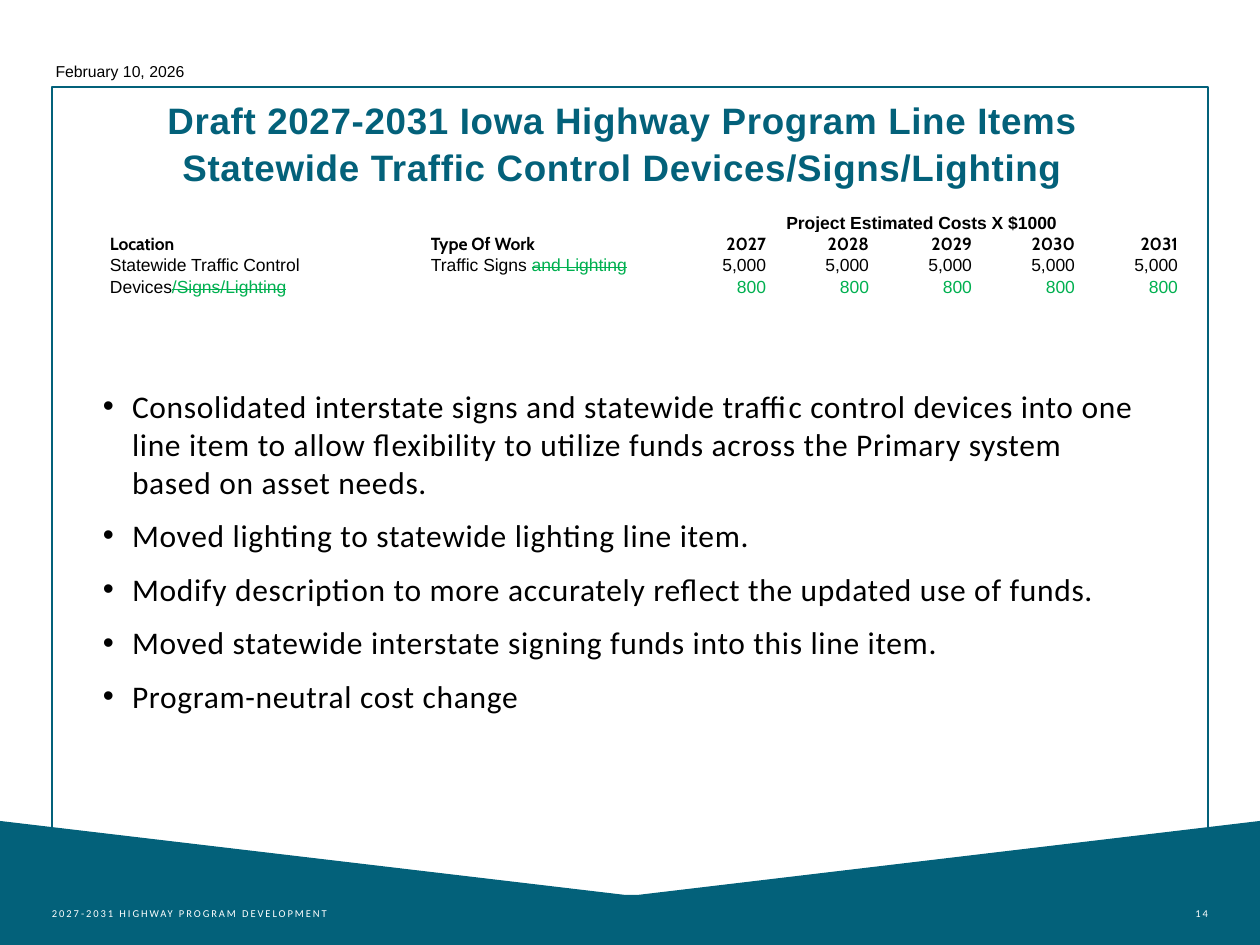
from dataclasses import dataclass, replace

from lxml import etree
from pptx import Presentation
from pptx.dml.color import RGBColor
from pptx.enum.shapes import MSO_SHAPE
from pptx.enum.text import MSO_ANCHOR, PP_ALIGN
from pptx.oxml.ns import qn
from pptx.util import Emu, Pt

RECT = MSO_SHAPE.RECTANGLE
TOP, BOTTOM = MSO_ANCHOR.TOP, MSO_ANCHOR.BOTTOM
LEFT, CENTER, RIGHT = PP_ALIGN.LEFT, PP_ALIGN.CENTER, PP_ALIGN.RIGHT
SCALE = 914400 / 126
TEAL, WHITE, BLACK, GREEN = "03617A", "FFFFFF", "000000", "00B050"


@dataclass(frozen=True)
class Style:
    font: str
    size: int
    color: str = BLACK
    bold: bool = False
    strike: bool = False
    gap: float = 0


@dataclass(frozen=True)
class Box:
    left: int
    top: int
    width: int
    height: int


@dataclass(frozen=True)
class Label:
    text: str
    box: Box
    style: Style
    align: PP_ALIGN = LEFT
    anchor: MSO_ANCHOR = TOP
    inset: tuple = (0, 6, 0, 6)
    wrap: bool = True


@dataclass(frozen=True)
class Entry:
    text: str = ""
    style: Style = Style("Arial", 10)
    struck: str = ""
    align: PP_ALIGN = LEFT
    fill: str = ""


def px(length: float) -> Emu:
    return Emu(round(length * SCALE))


def rgb(color: str) -> RGBColor:
    return RGBColor.from_string(color)


def place(box: Box) -> tuple:
    return px(box.left), px(box.top), px(box.width), px(box.height)


def format_run(run, style: Style) -> None:
    font = run.font
    font.name, font.size, font.bold = style.font, Pt(style.size), style.bold
    font.color.rgb = rgb(style.color)
    props = run._r.get_or_add_rPr()
    if style.gap:
        props.set("spc", str(round(style.gap * 100)))
    if style.strike:
        props.set("strike", "sngStrike")


def fill_frame(shape, label: Label) -> None:
    frame = shape.text_frame
    frame.text = label.text
    frame.word_wrap = label.wrap
    frame.vertical_anchor = label.anchor
    (frame.margin_left, frame.margin_top,
     frame.margin_right, frame.margin_bottom) = map(px, label.inset)
    for line in frame.paragraphs:
        line.alignment = label.align
        for run in line.runs:
            format_run(run, label.style)


def add_label(slide, label: Label):
    shape = slide.shapes.add_textbox(*place(label.box))
    fill_frame(shape, label)
    return shape


def add_title(slide, label: Label) -> None:
    title = slide.shapes.title
    title.left, title.top, title.width, title.height = place(label.box)
    fill_frame(title, label)
    for line in title.text_frame.paragraphs:
        line.line_spacing = 1.06


def add_list(slide, label: Label) -> None:
    lines = add_label(slide, label).text_frame.paragraphs
    for index, line in enumerate(lines):
        props = line._p.get_or_add_pPr()
        props.set("marL", str(px(29)))
        props.set("indent", str(-px(29)))
        etree.SubElement(props, qn("a:buFont")).set("typeface", "Arial")
        etree.SubElement(props, qn("a:buChar")).set("char", "•")
        if index:
            line.space_before = Pt(9)


def add_band(slide) -> None:
    points = [(625, 895), (638, 895), (1260, 821), (1260, 945), (0, 945)]
    maker = slide.shapes.build_freeform(0, 821, scale=SCALE)
    maker.add_line_segments(points, close=True)
    band = maker.convert_to_shape()
    band.shadow.inherit = False
    band.fill.solid()
    band.fill.fore_color.rgb = rgb(TEAL)
    band.line.fill.background()


def add_border(slide, box: Box) -> None:
    border = slide.shapes.add_shape(RECT, *place(box))
    border.shadow.inherit = False
    border.fill.background()
    border.line.color.rgb = rgb(TEAL)
    border.line.width = Pt(1)


def fill_cell(cell, entry: Entry) -> None:
    cell.margin_left = cell.margin_top = cell.margin_right = px(1)
    cell.margin_bottom = 0
    if entry.fill:
        cell.fill.solid()
        cell.fill.fore_color.rgb = rgb(entry.fill)
    else:
        cell.fill.background()
    line = cell.text_frame.paragraphs[0]
    if not entry.text:
        line._p.get_or_add_endParaRPr().set("sz", str(entry.style.size * 100))
        return
    line.text = entry.text
    line.alignment = entry.align
    format_run(line.runs[0], entry.style)
    if entry.struck:
        run = line.add_run()
        run.text = entry.struck
        format_run(run, replace(entry.style, color=GREEN, strike=True))


def add_costs(slide, box: Box, cols: list, heights: list, rows: list) -> None:
    table = slide.shapes.add_table(len(rows), len(cols), *place(box)).table
    table.first_row = table.horz_banding = False
    for col, width in zip(table.columns, cols):
        col.width = px(width)
    for row, height, entries in zip(table.rows, heights, rows):
        row.height = px(height)
        for cell, entry in zip(row.cells, entries):
            fill_cell(cell, entry)
    table.cell(0, 2).merge(table.cell(0, 6))
    table.cell(0, 2).vertical_anchor = BOTTOM


def main() -> None:
    deck = Presentation()
    deck.slide_width, deck.slide_height = px(1260), px(945)
    slide = deck.slides.add_slide(deck.slide_layouts[5])

    add_band(slide)
    add_border(slide, Box(52, 87, 1156, 839))
    small = Style("Calibri", 6, WHITE, gap=1.1)
    add_label(slide, Label("2027-2031 HIGHWAY PROGRAM DEVELOPMENT",
                           Box(52, 876, 336, 50), small, anchor=BOTTOM))
    add_label(slide, Label("14", Box(1086, 876, 122, 50), small, RIGHT, BOTTOM))
    add_label(slide, Label("February 10, 2026", Box(40, 56, 160, 31),
                           Style("Arial", 9), CENTER, inset=(13, 6, 13, 6), wrap=False))
    add_title(slide, Label(
        "Draft 2027-2031 Iowa Highway Program Line Items\n"
        "Statewide Traffic Control Devices/Signs/Lighting",
        Box(103, 89, 1052, 105), Style("Arial", 21, TEAL, True, gap=0.4),
        CENTER, inset=(0, 6, 13, 6)))
    add_list(slide, Label(
        "Consolidated interstate signs and statewide traffic control devices into one "
        "line item to allow flexibility to utilize funds across the Primary system "
        "based on asset needs.\n"
        "Moved lighting to statewide lighting line item.\n"
        "Modify description to more accurately reflect the updated use of funds.\n"
        "Moved statewide interstate signing funds into this line item.\n"
        "Program-neutral cost change",
        Box(103, 381, 1052, 388), Style("Calibri", 18, gap=0.4), inset=(0, 6, 13, 6)))

    plain = Style("Arial", 10)
    head = Style("Cabin", 10, bold=True)
    years = [Entry(str(year), head, align=RIGHT, fill=WHITE) for year in range(2027, 2032)]
    count = len(years)
    banner = Entry("Project Estimated Costs X $1000", replace(plain, bold=True), align=CENTER)
    added = Entry("800", replace(plain, color=GREEN), align=RIGHT)
    rows = [
        [Entry(), Entry(), banner] + [Entry()] * (count - 1),
        [Entry(text, head, fill=WHITE) for text in ("Location", "Type Of Work")] + years,
        [Entry("Statewide Traffic Control"), Entry("Traffic Signs ", struck="and Lighting")]
        + [Entry("5,000", align=RIGHT)] * count,
        [Entry("Devices", struck="/Signs/Lighting"), Entry()] + [added] * count,
    ]
    add_costs(slide, Box(109, 209, 1070, 90), [321, 234] + [103] * count,
              [24, 22, 22, 22], rows)
    deck.save("out.pptx")


if __name__ == "__main__":
    main()
